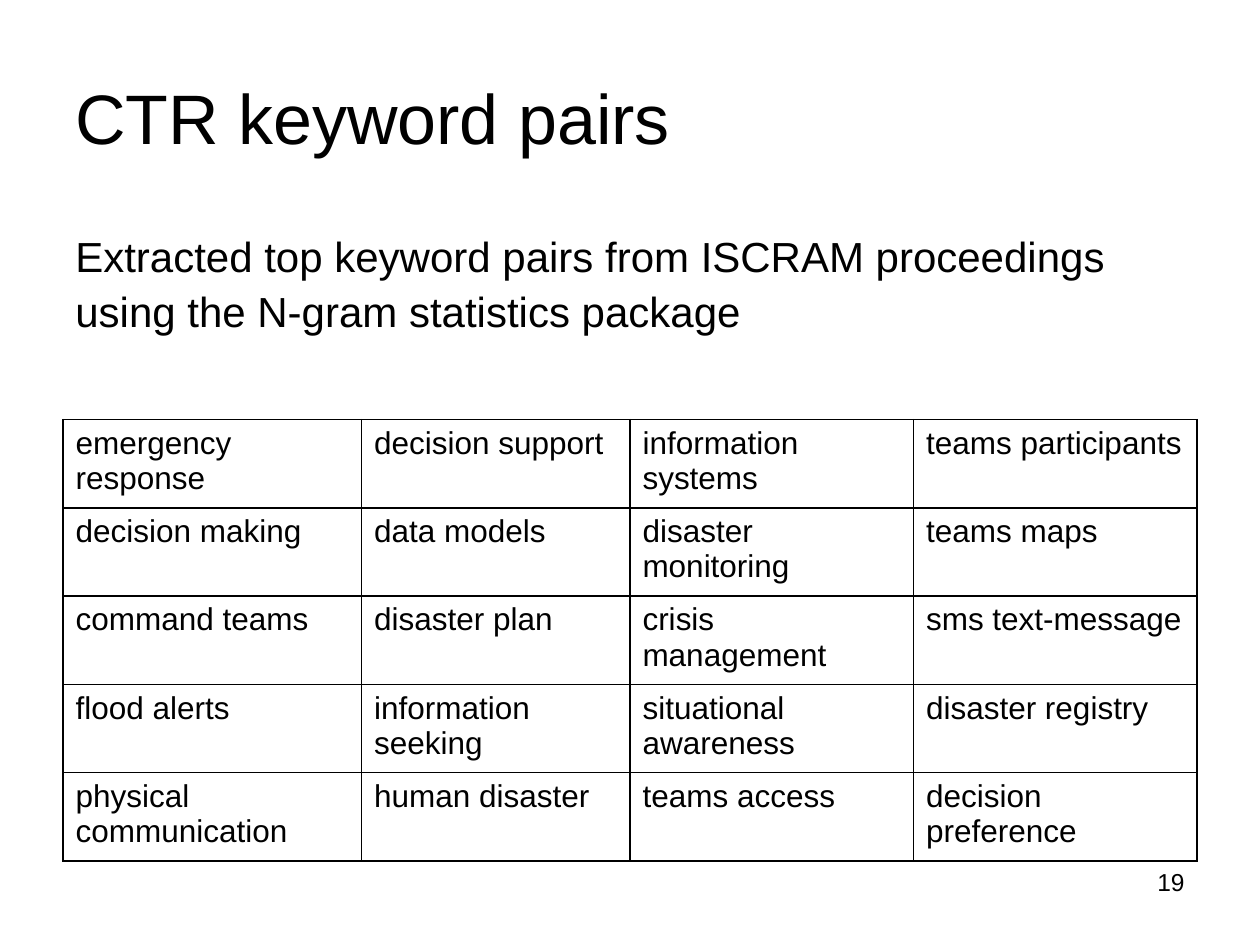
"""Build the keyword pairs slide: title, lead text, table and page number."""
from lxml.etree import SubElement
from pptx import Presentation
from pptx.dml.color import RGBColor
from pptx.enum.text import MSO_ANCHOR as Anchor, PP_ALIGN as Align
from pptx.oxml.ns import qn
from pptx.util import Inches, Pt

BLACK = RGBColor(0, 0, 0)
WHITE = RGBColor(255, 255, 255)
WIDE, HIGH = 10, 7.5
EDGE = WIDE * 0.05
SPAN = WIDE - 2 * EDGE

TEXTS = [
    ("CTR keyword pairs", (EDGE, 0.3, SPAN, 1.25), 40, Anchor.MIDDLE, {}),
    ("Extracted top keyword pairs from ISCRAM proceedings using the "
     "N-gram statistics package", (EDGE, 1.75, SPAN, 1.25), 24, Anchor.TOP,
     {"line_spacing": 1.08}),
    ("19", (7.17, 6.83, 2.33, 0.52), 14, Anchor.TOP,
     {"alignment": Align.RIGHT}),
]
PAIRS = [
    ("emergency response", "decision support", "information systems",
     "teams participants"),
    ("decision making", "data models", "disaster monitoring", "teams maps"),
    ("command teams", "disaster plan", "crisis management",
     "sms text-message"),
    ("flood alerts", "information seeking", "situational awareness",
     "disaster registry"),
    ("physical communication", "human disaster", "teams access",
     "decision preference"),
]
COLS = (2.37, 2.13, 2.25, 2.25)
TOP, ROW = 3.33, 0.66


def write(frame, text, size, form):
    para = frame.paragraphs[0]
    for key, value in form.items():
        setattr(para, key, value)
    run = para.add_run()
    run.text = text
    for key, value in {"name": "Arial", "size": Pt(size)}.items():
        setattr(run.font, key, value)
    run.font.color.rgb = BLACK


def rule(cell):
    props = cell._tc.get_or_add_tcPr()
    for at, side in enumerate(("lnL", "lnR", "lnT", "lnB")):
        line = props.makeelement(qn(f"a:{side}"), {"w": str(Pt(1))})
        fill = SubElement(line, qn("a:solidFill"))
        SubElement(fill, qn("a:srgbClr"), val=str(BLACK))
        props.insert(at, line)


def add_text(slide, text, box, size, anchor, form):
    frame = slide.shapes.add_textbox(*map(Inches, box)).text_frame
    frame.word_wrap = True
    frame.vertical_anchor = anchor
    write(frame, text, size, form)


def add_pairs(slide):
    box = map(Inches, (EDGE, TOP, SPAN, ROW * len(PAIRS)))
    table = slide.shapes.add_table(len(PAIRS), len(COLS), *box).table
    table.first_row = table.horz_banding = False
    for col, width in zip(table.columns, COLS):
        col.width = Inches(width)
    for row, words in zip(table.rows, PAIRS):
        row.height = Inches(ROW)
        for cell, text in zip(row.cells, words):
            cell.fill.solid()
            cell.fill.fore_color.rgb = WHITE
            write(cell.text_frame, text, 18, {})
            rule(cell)


def main():
    deck = Presentation()
    deck.slide_width, deck.slide_height = Inches(WIDE), Inches(HIGH)
    slide = deck.slides.add_slide(deck.slide_layouts[6])
    for item in TEXTS:
        add_text(slide, *item)
    add_pairs(slide)
    deck.save("out.pptx")


if __name__ == "__main__":
    main()
